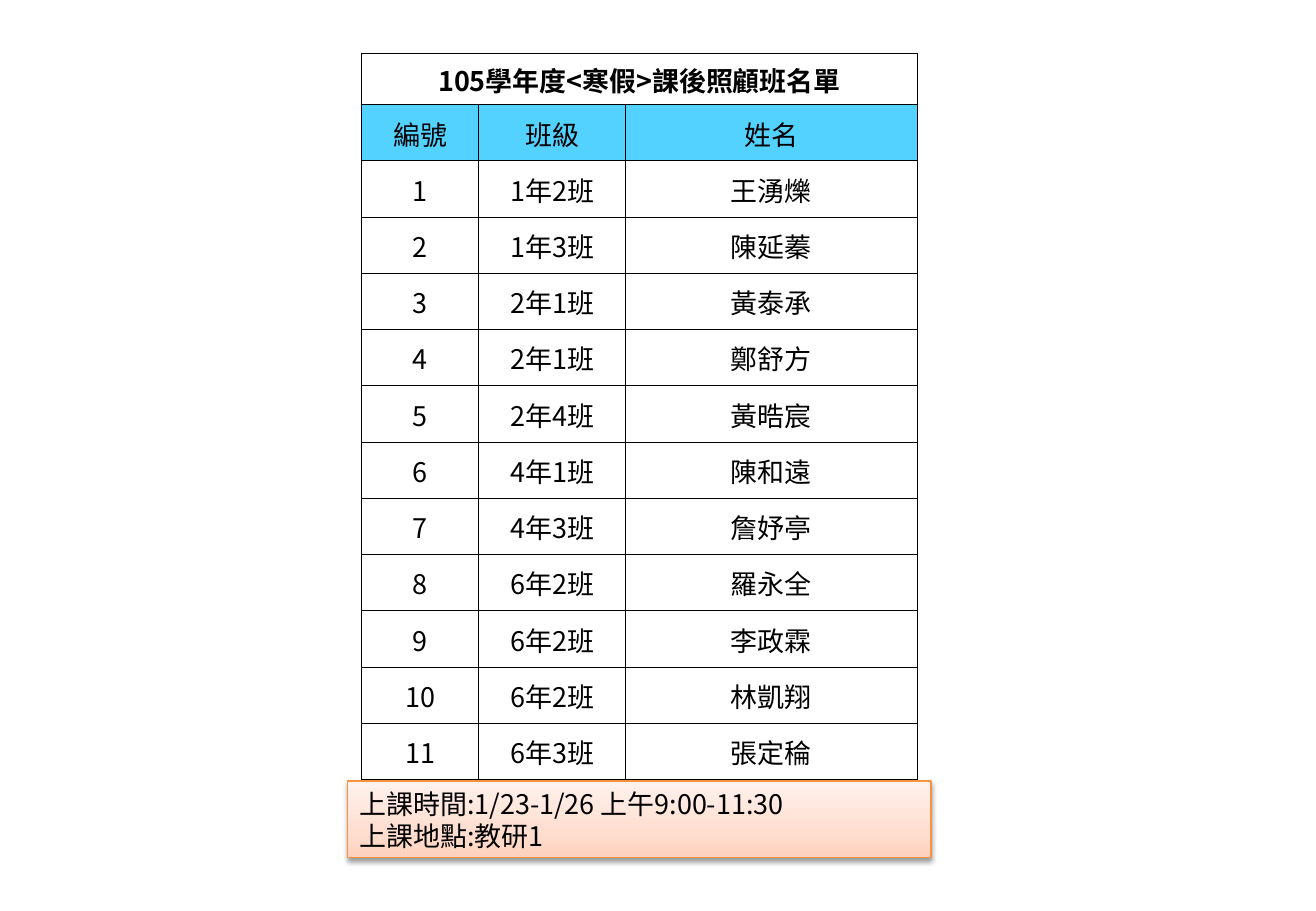
from lxml import etree
from pptx import Presentation
from pptx import util as u
from pptx.dml.color import RGBColor
from pptx.enum import shapes, text
from pptx.oxml import ns

TITLE = "105學年度<寒假>課後照顧班名單"
HEADINGS = ("編號", "班級", "姓名")
STUDENTS = (
    ("1年2班", "王湧爍"),
    ("1年3班", "陳延蓁"),
    ("2年1班", "黃泰承"),
    ("2年1班", "鄭舒方"),
    ("2年4班", "黃晧宸"),
    ("4年1班", "陳和遠"),
    ("4年3班", "詹妤亭"),
    ("6年2班", "羅永全"),
    ("6年2班", "李政霖"),
    ("6年2班", "林凱翔"),
    ("6年3班", "張定稐"),
)
SCHEDULE = ("上課時間:1/23-1/26 上午9:00-11:30", "上課地點:教研1")


def colour(value):
    return RGBColor.from_string(value)


def add_node(parent, tag, **attributes):
    values = {name: str(value) for name, value in attributes.items()}
    return etree.SubElement(parent, ns.qn(tag), values)


def write(paragraph, content, font="Noto Sans CJK SC", size=16, bold=False,
          ink="000000", align=text.PP_ALIGN.LEFT):
    paragraph.alignment = align
    run = paragraph.add_run()
    run.text = content
    run.font.size = u.Pt(size)
    run.font.bold = bold
    run.font.color.rgb = colour(ink)
    run.font.name = font
    add_node(run.font._element, "a:ea", typeface=font)


class Roster:
    header_fill = "53D2FF"
    border = "000000"
    border_width = 0.5
    note_line = "F69240"
    note_stops = ((0, "FFD2BD"), (35, "FFDED0"), (100, "FFF2ED"))

    def __init__(self, slide):
        self.slide = slide

    def cell(self, cell, content, bold=False, fill=None):
        cell.margin_left = cell.margin_right = cell.margin_top = u.Pt(0.7)
        cell.margin_bottom = 0
        cell.vertical_anchor = text.MSO_ANCHOR.MIDDLE
        if fill:
            cell.fill.solid()
            cell.fill.fore_color.rgb = colour(fill)
        else:
            cell.fill.background()
        properties = cell._tc.get_or_add_tcPr()
        for index, side in enumerate(("a:lnL", "a:lnR", "a:lnT", "a:lnB")):
            line = add_node(properties, side, w=u.Pt(self.border_width))
            add_node(add_node(line, "a:solidFill"), "a:srgbClr", val=self.border)
            properties.insert(index, line)
        if content:
            write(cell.text_frame.paragraphs[0], content, bold=bold,
                  align=text.PP_ALIGN.CENTER)

    def table(self, rows, left, top, widths, title_height, row_height):
        height = title_height + row_height * (len(rows) - 1)
        table = self.slide.shapes.add_table(
            len(rows), len(widths), u.Pt(left), u.Pt(top),
            u.Pt(sum(widths)), u.Pt(height)).table
        table.first_row = table.horz_banding = False
        for column, width in zip(table.columns, widths):
            column.width = u.Pt(width)
        for index, values in enumerate(rows):
            table.rows[index].height = u.Pt(row_height if index else title_height)
            for cell, content in zip(table.rows[index].cells, values):
                self.cell(cell, content, bold=index == 0,
                          fill=self.header_fill if index == 1 else None)
        table.cell(0, 0).merge(table.cell(0, len(widths) - 1))

    def note(self, lines, left, top, width, height):
        shape = self.slide.shapes.add_shape(
            shapes.MSO_SHAPE.RECTANGLE, u.Pt(left), u.Pt(top),
            u.Pt(width), u.Pt(height))
        shape.line.color.rgb = colour(self.note_line)
        shape.line.width = u.Pt(0.75)
        shape.fill.gradient()
        shape.fill.gradient_angle = 90
        properties = shape._element.spPr
        stops = properties.find(".//" + ns.qn("a:gsLst"))
        stops.clear()
        for position, value in self.note_stops:
            stop = add_node(stops, "a:gs", pos=position * 1000)
            add_node(stop, "a:srgbClr", val=value)
        shape.shadow.inherit = False
        shadow = add_node(properties.find(ns.qn("a:effectLst")), "a:outerShdw",
                          blurRad=u.Pt(3.1), dist=u.Pt(1.6), dir=5400000,
                          rotWithShape=0)
        shade = add_node(shadow, "a:srgbClr", val="000000")
        add_node(shade, "a:alpha", val=38000)
        frame = shape.text_frame
        frame.word_wrap = True
        frame.vertical_anchor = text.MSO_ANCHOR.MIDDLE
        for index, line in enumerate(lines):
            paragraph = frame.add_paragraph() if index else frame.paragraphs[0]
            write(paragraph, line)


def main():
    presentation = Presentation()
    presentation.slide_width = u.Pt(780)
    presentation.slide_height = u.Pt(540)
    slide = presentation.slides.add_slide(presentation.slide_layouts[6])
    roster = Roster(slide)
    rows = [(TITLE, "", ""), HEADINGS]
    rows += [(str(number), *student) for number, student in enumerate(STUDENTS, 1)]
    roster.table(rows, left=214.4, top=31.8, widths=(69.3, 87.1, 172.8),
                 title_height=30.2, row_height=33.36)
    roster.note(SCHEDULE, left=206, top=463, width=345.8, height=45.5)
    presentation.save("out.pptx")


if __name__ == "__main__":
    main()
